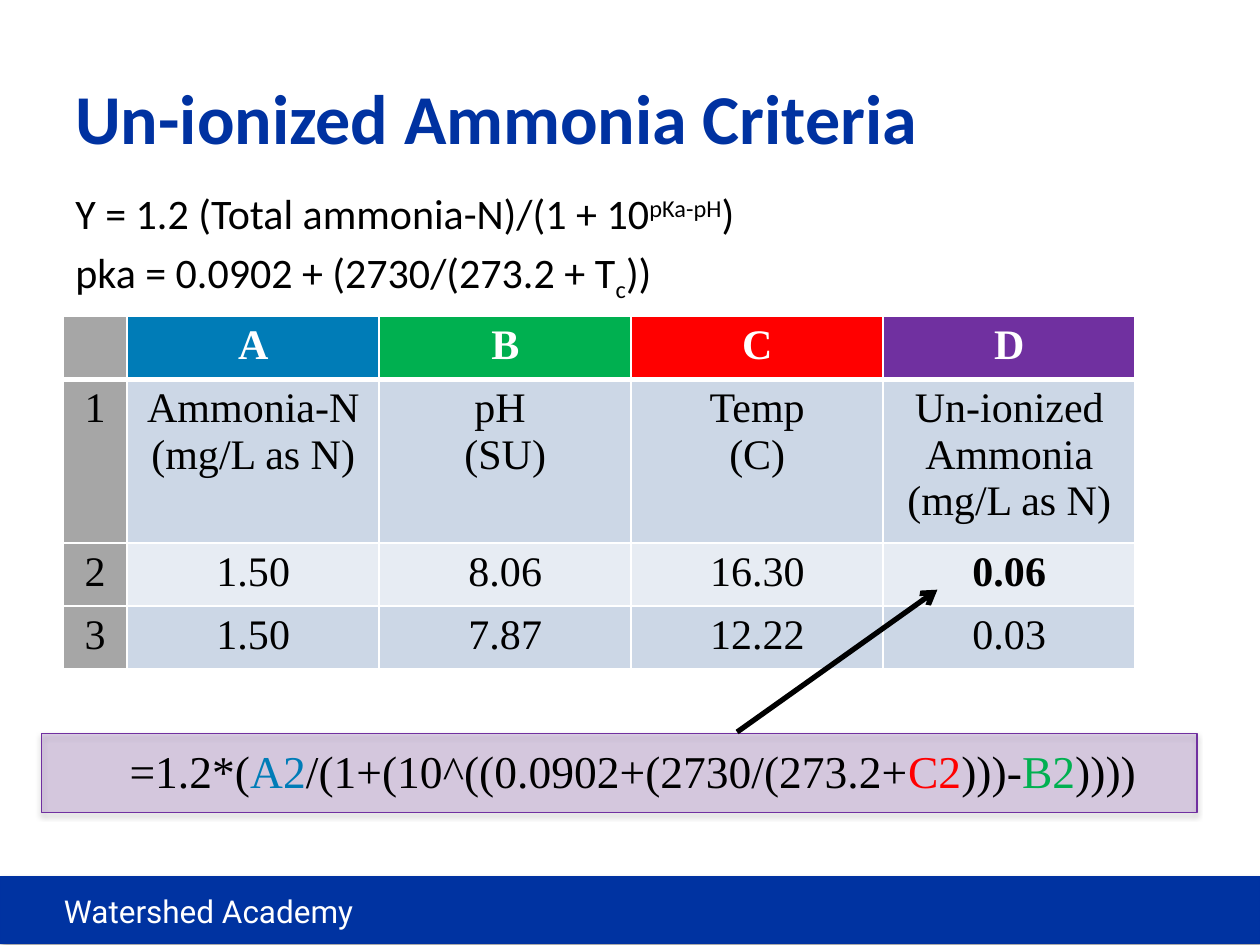
import pptx
import pptx.chart.data
import pptx.dml.color
import pptx.enum.shapes
import pptx.enum.text
import pptx.oxml
import pptx.oxml.ns
import pptx.util
from pptx.util import Inches

COLORS = {
    "navy": "0033A1", "title": "0032A1", "purple": "7030A0", "blue": "007CB7",
    "green": "00B050", "red": "FF0000", "gray": "A6A6A6", "band": "CCD7E6",
    "light": "E7ECF3", "black": "000000", "white": "FFFFFF",
}
SERIF = "Times New Roman"
NAMESPACE = pptx.oxml.ns.nsdecls("a")
HEADER = ["", "A", "B", "C", "D"]
HEADER_FILLS = ["gray", "blue", "green", "red", "purple"]
ROWS = [
    HEADER,
    ["1", "Ammonia-N (mg/L as N)", "pH \n(SU)", "Temp\n(C)", "Un-ionized Ammonia (mg/L as N)"],
    ["2", "1.50", "8.06", "16.30", "0.06"],
    ["3", "1.50", "7.87", "12.22", "0.03"],
]
COLUMN_WIDTHS = [0.51, 2, 2, 2, 2]
ROW_HEIGHTS = [0.46, 1.2, 0.47, 0.47]
EQUATIONS = [
    [("Y = 1.2 (Total ammonia-N)/(1 + 10", 0), ("pKa-pH", 30), (")", 0)],
    [("pka = 0.0902 + (2730/(273.2 + T", 0), ("c", -25), ("))", 0)],
]
FORMULA = [
    ("=1.2*(", "black"), ("A2", "blue"), ("/(1+(10^((0.0902+(2730/(273.2+", "black"),
    ("C2", "red"), (")))-", "black"), ("B2", "green"), ("))))", "black"),
]


def rgb(name):
    return pptx.dml.color.RGBColor.from_string(COLORS[name])


def style(paragraph, name, size, color, bold=False):
    font = paragraph.font
    font.name, font.size, font.bold = name, pptx.util.Pt(size), bold
    font.color.rgb = rgb(color)


def add_text(slide, box, wrap=True):
    frame = slide.shapes.add_textbox(*map(Inches, box)).text_frame
    frame.word_wrap = wrap
    return frame


def add_panel(slide, box, fill, line, opacity=100):
    shape = slide.shapes.add_shape(
        pptx.enum.shapes.MSO_SHAPE.RECTANGLE, *map(Inches, box))
    shape.fill.solid()
    shape.fill.fore_color.rgb = rgb(fill)
    color = shape._element.spPr.find(".//" + pptx.oxml.ns.qn("a:srgbClr"))
    if opacity < 100:
        color.append(pptx.oxml.parse_xml(f'<a:alpha {NAMESPACE} val="{opacity * 1000}"/>'))
    shape.line.color.rgb = rgb(line)
    shape.line.width = pptx.util.Pt(0.75)
    shape.shadow.inherit = False
    shape._element.spPr.find(pptx.oxml.ns.qn("a:effectLst")).append(pptx.oxml.parse_xml(
        f'<a:outerShdw {NAMESPACE} blurRad="{pptx.util.Pt(3.1)}" dist="{pptx.util.Pt(1.8)}" '
        f'dir="5400000" rotWithShape="0"><a:srgbClr val="{COLORS["black"]}">'
        '<a:alpha val="35000"/></a:srgbClr></a:outerShdw>'))


def add_footer(slide, box):
    left, top, width, height = box
    add_panel(slide, box, "navy", "title")
    paragraph = add_text(slide, (left + 0.41, top + 0.07, 3.36, 0.41)).paragraphs[0]
    paragraph.text = "Watershed Academy"
    style(paragraph, "Roboto", 18, "white")


def add_title(slide, box):
    frame = add_text(slide, box)
    frame.vertical_anchor = pptx.enum.text.MSO_ANCHOR.MIDDLE
    frame.text = "Un-ionized Ammonia Criteria"
    style(frame.paragraphs[0], "Calibri", 40, "title", True)


def add_equations(slide, box):
    frame = add_text(slide, box)
    for index, parts in enumerate(EQUATIONS):
        paragraph = frame.add_paragraph() if index else frame.paragraphs[0]
        if index:
            paragraph.space_before = pptx.util.Pt(4.8)
        style(paragraph, "Calibri", 24, "black")
        for text, baseline in parts:
            run = paragraph.add_run()
            run.text = text
            if baseline:
                run._r.get_or_add_rPr().set("baseline", str(baseline * 1000))


def set_borders(cell, bottom):
    properties = cell._tc.get_or_add_tcPr()
    for index, (side, width) in enumerate([("L", 1), ("R", 1), ("T", 1), ("B", bottom)]):
        properties.insert(index, pptx.oxml.parse_xml(
            f'<a:ln{side} {NAMESPACE} w="{pptx.util.Pt(width)}"><a:solidFill>'
            f'<a:srgbClr val="{COLORS["white"]}"/></a:solidFill></a:ln{side}>'))


def add_criteria_table(slide, box):
    table = slide.shapes.add_table(
        len(ROWS), len(HEADER), *map(Inches, box)).table
    for column, width in zip(table.columns, COLUMN_WIDTHS):
        column.width = Inches(width)
    for row, height in zip(table.rows, ROW_HEIGHTS):
        row.height = Inches(height)
    for row_index, texts in enumerate(ROWS):
        is_header = row_index == 0
        band = "band" if row_index % 2 else "light"
        fills = HEADER_FILLS if is_header else ["gray"] + [band] * 4
        for column_index, (text, fill) in enumerate(zip(texts, fills)):
            cell = table.cell(row_index, column_index)
            cell.fill.solid()
            cell.fill.fore_color.rgb = rgb(fill)
            set_borders(cell, 3 if is_header else 1)
            cell.text = text
            for paragraph in cell.text_frame.paragraphs:
                paragraph.alignment = pptx.enum.text.PP_ALIGN.CENTER
                style(paragraph, SERIF, 24, "white" if is_header else "black",
                      is_header or text == "0.06")


def add_formula(slide, box):
    left, top, width, height = box
    paragraph = add_text(slide, (left + 0.6, top + 0.03, 8.25, 0.54), False).paragraphs[0]
    style(paragraph, SERIF, 26, "black")
    for text, color in FORMULA:
        run = paragraph.add_run()
        run.text = text
        run.font.color.rgb = rgb(color)


def add_arrow(slide, start, end):
    connector = slide.shapes.add_connector(
        pptx.enum.shapes.MSO_CONNECTOR.STRAIGHT, *map(Inches, start + end))
    connector.line.color.rgb = rgb("black")
    connector.line.width = pptx.util.Pt(3)
    connector.line._get_or_add_ln().append(
        pptx.oxml.parse_xml(f'<a:tailEnd {NAMESPACE} type="arrow"/>'))
    connector._element.spPr.append(pptx.oxml.parse_xml(f"<a:effectLst {NAMESPACE}/>"))


def main():
    presentation = pptx.Presentation()
    presentation.slide_width, presentation.slide_height = Inches(10), Inches(7.5)
    slide = presentation.slides.add_slide(presentation.slide_layouts[6])
    formula_box = (0.33, 5.82, 9.17, 0.63)
    add_footer(slide, (0, 6.96, 10, 0.53))
    add_panel(slide, formula_box, "purple", "purple", 20)
    add_title(slide, (0.5, 0.3, 9, 1.25))
    add_equations(slide, (0.5, 1.44, 8.93, 5.31))
    add_criteria_table(slide, (0.5, 2.51, sum(COLUMN_WIDTHS), sum(ROW_HEIGHTS)))
    add_formula(slide, formula_box)
    add_arrow(slide, (5.85, 5.81), (7.44, 4.68))
    presentation.save("out.pptx")


if __name__ == "__main__":
    main()
